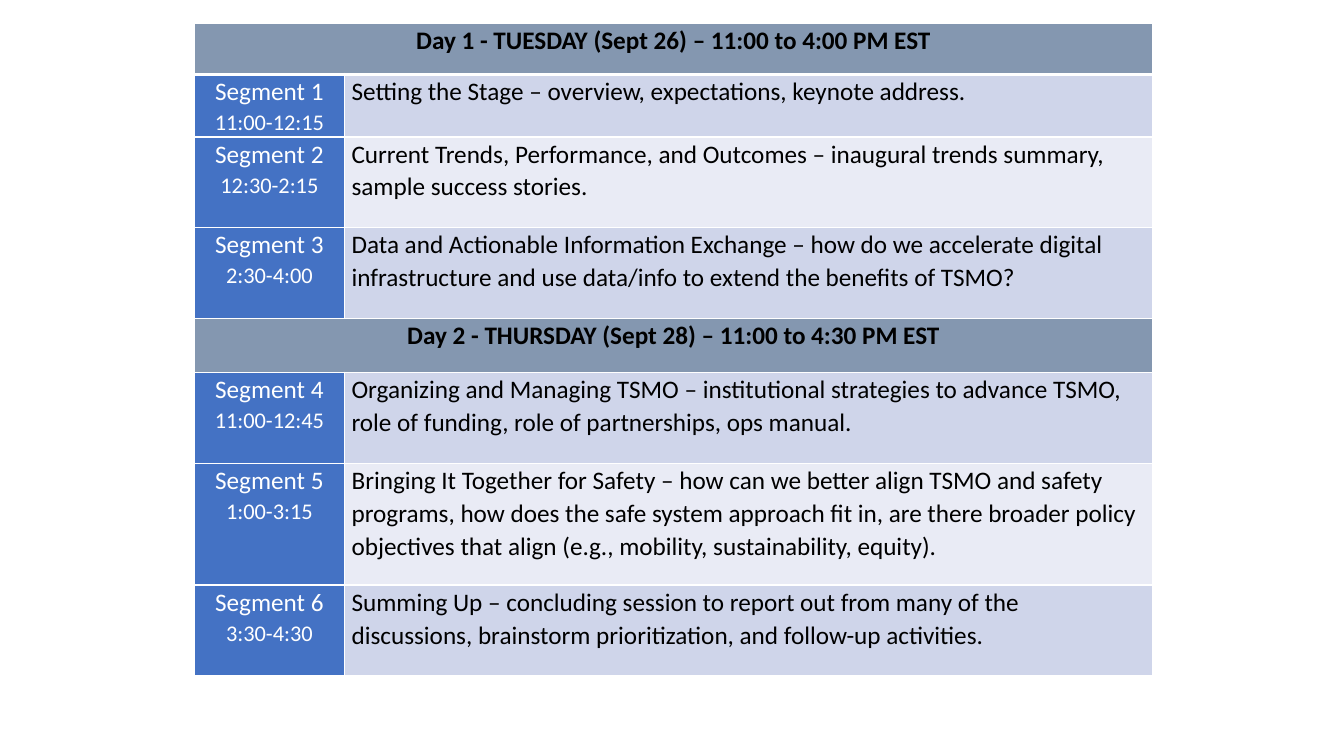
from lxml.etree import SubElement as Sub
from pptx import Presentation
from pptx.dml.color import RGBColor
from pptx.enum.text import PP_ALIGN as Align
from pptx.oxml.ns import qn
from pptx.util import Cm, Pt


def style(cell, fill, top, base):
    """Set margins, white borders and fill of a cell."""
    cell.margin_left = cell.margin_right = Cm(0.18)
    cell.margin_top = cell.margin_bottom = 0
    props = cell._tc.get_or_add_tcPr()
    for side, width in (("L", 1), ("R", 1), ("T", top), ("B", base)):
        line = Sub(props, qn("a:ln" + side), w=str(Pt(width)))
        solid = Sub(line, qn("a:solidFill"))
        Sub(solid, qn("a:srgbClr"), val="FFFFFF")
    cell.fill.solid()
    cell.fill.fore_color.rgb = RGBColor.from_string(fill)


def write(cell, lines, sizes, color, align, bold=False):
    """Write one paragraph per line."""
    frame = cell.text_frame
    frame.text = "\n".join(lines)
    for para, size in zip(frame.paragraphs, sizes):
        para.alignment = align
        para.line_spacing = 1.07
        font = para.font
        font.name, font.size, font.bold = "Calibri", Pt(size), bold
        font.color.rgb = RGBColor.from_string(color)


# Agenda: (height, day heading) or (height, time, topic)
agenda = [
    (1.3, "Day 1 - TUESDAY (Sept 26) – 11:00 to 4:00 PM EST"),
    (1.57, "11:00-12:15", "Setting the Stage – overview, expectations, keynote address."),
    (2.29, "12:30-2:15", "Current Trends, Performance, and Outcomes – inaugural trends "
     "summary, sample success stories."),
    (2.29, "2:30-4:00", "Data and Actionable Information Exchange – how do we accelerate "
     "digital infrastructure and use data/info to extend the benefits of TSMO?"),
    (1.35, "Day 2 - THURSDAY (Sept 28) – 11:00 to 4:30 PM EST"),
    (2.29, "11:00-12:45", "Organizing and Managing TSMO – institutional strategies to "
     "advance TSMO, role of funding, role of partnerships, ops manual."),
    (3.07, "1:00-3:15", "Bringing It Together for Safety – how can we better align TSMO and "
     "safety programs, how does the safe system approach fit in, are there broader policy "
     "objectives that align (e.g., mobility, sustainability, equity)."),
    (2.29, "3:30-4:30", "Summing Up – concluding session to report out from many of the "
     "discussions, brainstorm prioritization, and follow-up activities."),
]
widths = [3.78, 20.37]

# Slide
deck = Presentation()
deck.slide_width, deck.slide_height = Cm(33.87), Cm(19.05)
slide = deck.slides.add_slide(deck.slide_layouts[6])

# Table
high = sum(row[0] for row in agenda)
table = slide.shapes.add_table(len(agenda), 2, Cm(4.9), Cm(0.58),
                               Cm(sum(widths)), Cm(high)).table
table.first_row = table.horz_banding = False
for col, width in zip(table.columns, widths):
    col.width = Cm(width)

# Rows: day headings span both columns, segments are numbered in turn
count = 0
for i, (height, head, *topic) in enumerate(agenda):
    table.rows[i].height = Cm(height)
    left, right = table.cell(i, 0), table.cell(i, 1)
    top, base = 3 if i == 1 else 1, 3 if i == 0 else 1
    if topic:
        count += 1
        style(left, "4472C4", top, base)
        style(right, "CFD5EA" if i % 2 else "E9EBF5", top, base)
        write(left, [f"Segment {count}", head], [18, 16], "FFFFFF", Align.CENTER)
        write(right, topic, [18], "000000", Align.LEFT)
    else:
        left.merge(right)
        for cell in (left, right):
            style(cell, "8497B0", top, base)
        write(left, [head], [18], "000000", Align.CENTER, True)

deck.save("out.pptx")
